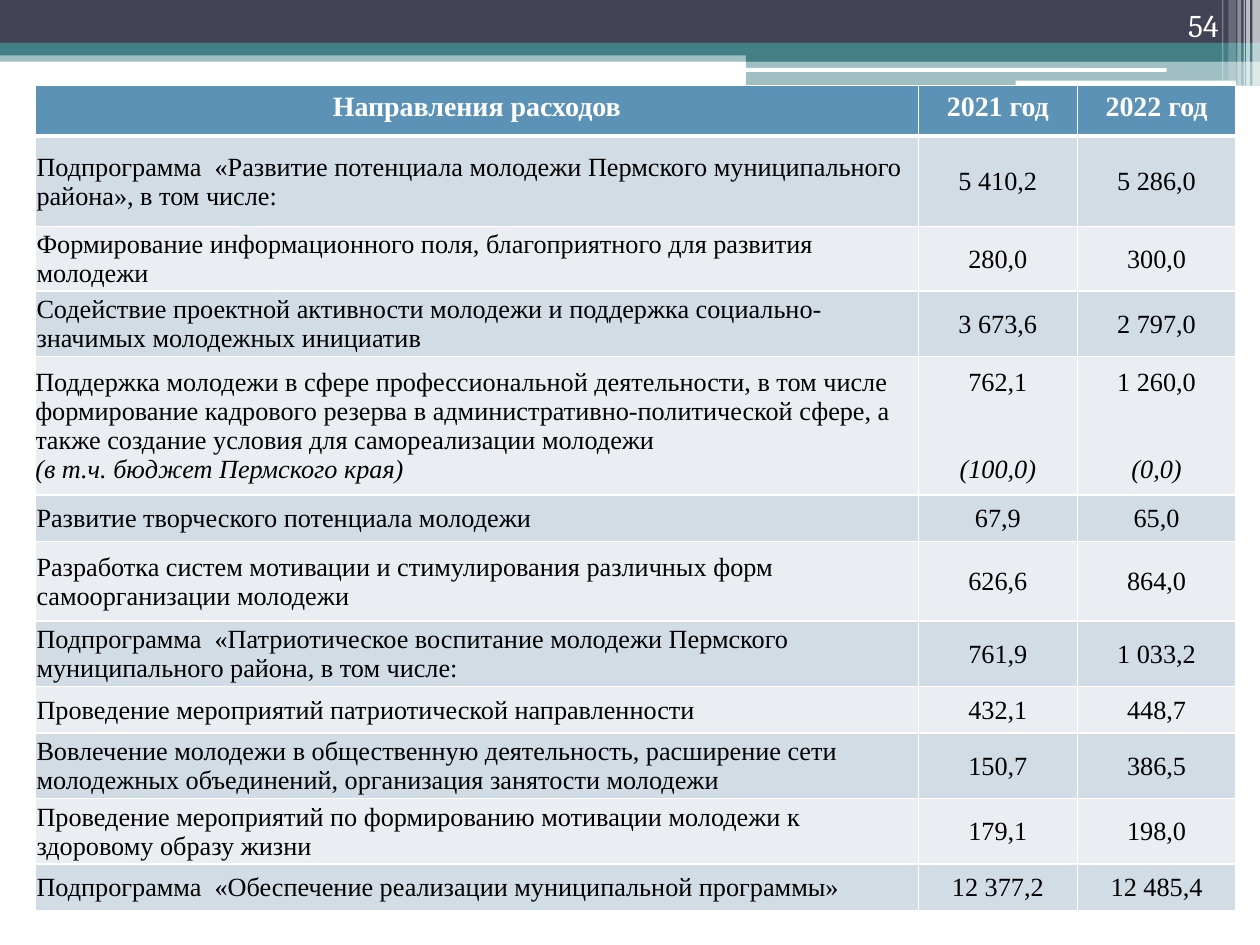
from dataclasses import dataclass

from lxml.etree import SubElement
from pptx import Presentation
from pptx.dml.color import RGBColor
from pptx.enum.shapes import MSO_SHAPE
from pptx.enum.text import MSO_ANCHOR, PP_ALIGN
from pptx.oxml.ns import qn
from pptx.util import Inches, Pt

WHITE = RGBColor(0xFF, 0xFF, 0xFF)
BLACK = RGBColor(0x00, 0x00, 0x00)
NAVY = RGBColor(0x42, 0x44, 0x56)
TEAL = RGBColor(0x43, 0x80, 0x86)
HEADER = RGBColor(0x5C, 0x92, 0xB5)
BANDS = (RGBColor(0xD2, 0xDC, 0xE5), RGBColor(0xEA, 0xEE, 0xF3))
FONT = "Times New Roman"
COLUMN_WIDTHS = (7.01, 1.26, 1.26)
THIN_MARGINS = (0.01, 0.01, 0.01, 0)
TEXT_MARGINS = (0.1, 0.05, 0.1, 0.05)
NOTE_MARGINS = (0, 0.05, 0.1, 0.05)


@dataclass
class Bar:
    left: float
    top: float
    width: float
    height: float
    color: RGBColor
    opacity: int = 100
    rounded: bool = False


@dataclass
class Row:
    height: float
    texts: tuple[str, str, str]
    notes: tuple[str, str, str] | None = None


BARS = [
    Bar(0, 0.4, 10, 0.09, TEAL, 50),
    Bar(0, 0, 10, 0.34, NAVY),
    Bar(0, 0.34, 10, 0.1, TEAL),
    Bar(5.92, 0.39, 4.08, 0.1, TEAL),
    Bar(5.92, 0.48, 4.08, 0.2, TEAL, 50),
    Bar(5.91, 0.54, 3.35, 0.03, WHITE, rounded=True),
    Bar(8.06, 0.64, 1.75, 0.04, WHITE, rounded=True),
    Bar(9.94, 0, 0.06, 0.68, WHITE, 65),
    Bar(9.89, 0, 0.03, 0.68, WHITE, 65),
    Bar(9.87, 0, 0.01, 0.68, WHITE, 60),
    Bar(9.82, 0, 0.03, 0.68, WHITE, 40),
    Bar(9.75, 0, 0.06, 0.64, WHITE, 20),
    Bar(9.7, 0, 0.01, 0.64, WHITE, 30),
]

ROWS = [
    Row(0.4, ("Направления расходов", "2021 год", "2022 год")),
    Row(0.72, ("Подпрограмма  «Развитие потенциала молодежи Пермского муниципального "
               "района», в том числе:", "5 410,2", "5 286,0")),
    Row(0.47, ("Формирование информационного поля, благоприятного для развития молодежи",
               "280,0", "300,0")),
    Row(0.52, ("Содействие проектной активности молодежи и поддержка "
               "социально-значимых молодежных инициатив", "3 673,6", "2 797,0")),
    Row(1.02, ("Поддержка молодежи в сфере профессиональной деятельности, в том числе "
               "формирование кадрового резерва в административно-политической сфере, "
               "а также создание условия для самореализации молодежи", "762,1", "1 260,0"),
        ("(в т.ч. бюджет Пермского края)", "(100,0)", "(0,0)")),
    Row(0.37, ("Развитие творческого потенциала молодежи", "67,9", "65,0")),
    Row(0.63, ("Разработка систем мотивации и стимулирования различных форм "
               "самоорганизации молодежи", "626,6", "864,0")),
    Row(0.52, ("Подпрограмма  «Патриотическое воспитание молодежи Пермского "
               "муниципального района, в том числе:", "761,9", "1 033,2")),
    Row(0.37, ("Проведение мероприятий патриотической направленности", "432,1", "448,7")),
    Row(0.52, ("Вовлечение молодежи в общественную деятельность, расширение сети "
               "молодежных объединений, организация занятости молодежи",
               "150,7", "386,5")),
    Row(0.52, ("Проведение мероприятий по формированию мотивации молодежи к здоровому "
               "образу жизни", "179,1", "198,0")),
    Row(0.37, ("Подпрограмма  «Обеспечение реализации муниципальной программы»",
               "12 377,2", "12 485,4")),
]


def draw_bar(s, bar: Bar) -> None:
    kind = MSO_SHAPE.ROUNDED_RECTANGLE if bar.rounded else MSO_SHAPE.RECTANGLE
    sp = s.shapes.add_shape(kind, Inches(bar.left), Inches(bar.top),
                            Inches(bar.width), Inches(bar.height))
    sp.shadow.inherit = False
    sp.line.fill.background()
    sp.fill.solid()
    sp.fill.fore_color.rgb = bar.color
    if bar.opacity < 100:
        color = sp.fill._xPr.find(qn("a:solidFill"))[0]
        SubElement(color, qn("a:alpha"), val=str(bar.opacity * 1000))


def draw_page_number(s, number: str) -> None:
    tf = s.shapes.add_textbox(Inches(8.94), 0, Inches(0.83), Inches(0.4)).text_frame
    tf.word_wrap = True
    tf.vertical_anchor = MSO_ANCHOR.BOTTOM
    p = tf.paragraphs[0]
    p.text = number
    p.alignment = PP_ALIGN.RIGHT
    p.font.name, p.font.size, p.font.color.rgb = "Cambria", Pt(18), WHITE


def set_borders(cell, top: float, bottom: float) -> None:
    tcPr = cell._tc.get_or_add_tcPr()
    sides = {"lnL": 1, "lnR": 1, "lnT": top, "lnB": bottom}
    for i, (side, width) in enumerate(sides.items()):
        ln = SubElement(tcPr, qn(f"a:{side}"), w=str(Pt(width)))
        SubElement(SubElement(ln, qn("a:solidFill")), qn("a:srgbClr"), val=str(WHITE))
        tcPr.insert(i, ln)


def set_margins(cell, margins: tuple[float, ...]) -> None:
    (cell.margin_left, cell.margin_top,
     cell.margin_right, cell.margin_bottom) = map(Inches, margins)


def fill_cell(cell, row: Row, i: int, j: int) -> None:
    header = i == 0
    cell.fill.solid()
    cell.fill.fore_color.rgb = HEADER if header else BANDS[(i - 1) % 2]
    cell.vertical_anchor = MSO_ANCHOR.TOP if header else MSO_ANCHOR.MIDDLE
    margins = NOTE_MARGINS if row.notes and j == 0 else THIN_MARGINS
    set_margins(cell, TEXT_MARGINS if header else margins)
    set_borders(cell, 3 if i == 1 else 1, 3 if header else 1)
    tf = cell.text_frame
    tf.paragraphs[0].text = row.texts[j]
    if row.notes:
        p = tf.add_paragraph()
        p.text = row.notes[j]
        p.font.italic = True
        p.space_before = Pt(33 if j else 0)
    for p in tf.paragraphs:
        p.alignment = PP_ALIGN.CENTER if header or j else PP_ALIGN.LEFT
        p.font.name = FONT
        p.font.size = Pt(16 if header else 15)
        p.font.bold = header
        p.font.color.rgb = WHITE if header else BLACK


def draw_table(s, rows: list[Row]) -> None:
    table = s.shapes.add_table(
        len(rows), len(COLUMN_WIDTHS), Inches(0.28), Inches(0.68),
        Inches(sum(COLUMN_WIDTHS)), Inches(sum(row.height for row in rows))).table
    for column, width in zip(table.columns, COLUMN_WIDTHS):
        column.width = Inches(width)
    for i, row in enumerate(rows):
        table.rows[i].height = Inches(row.height)
        for j in range(len(COLUMN_WIDTHS)):
            fill_cell(table.cell(i, j), row, i, j)


def main() -> None:
    prs = Presentation()
    prs.slide_width, prs.slide_height = Inches(10), Inches(7.5)
    s = prs.slides.add_slide(prs.slide_layouts[6])
    for bar in BARS:
        draw_bar(s, bar)
    draw_page_number(s, "54")
    draw_table(s, ROWS)
    prs.save("out.pptx")


if __name__ == "__main__":
    main()
